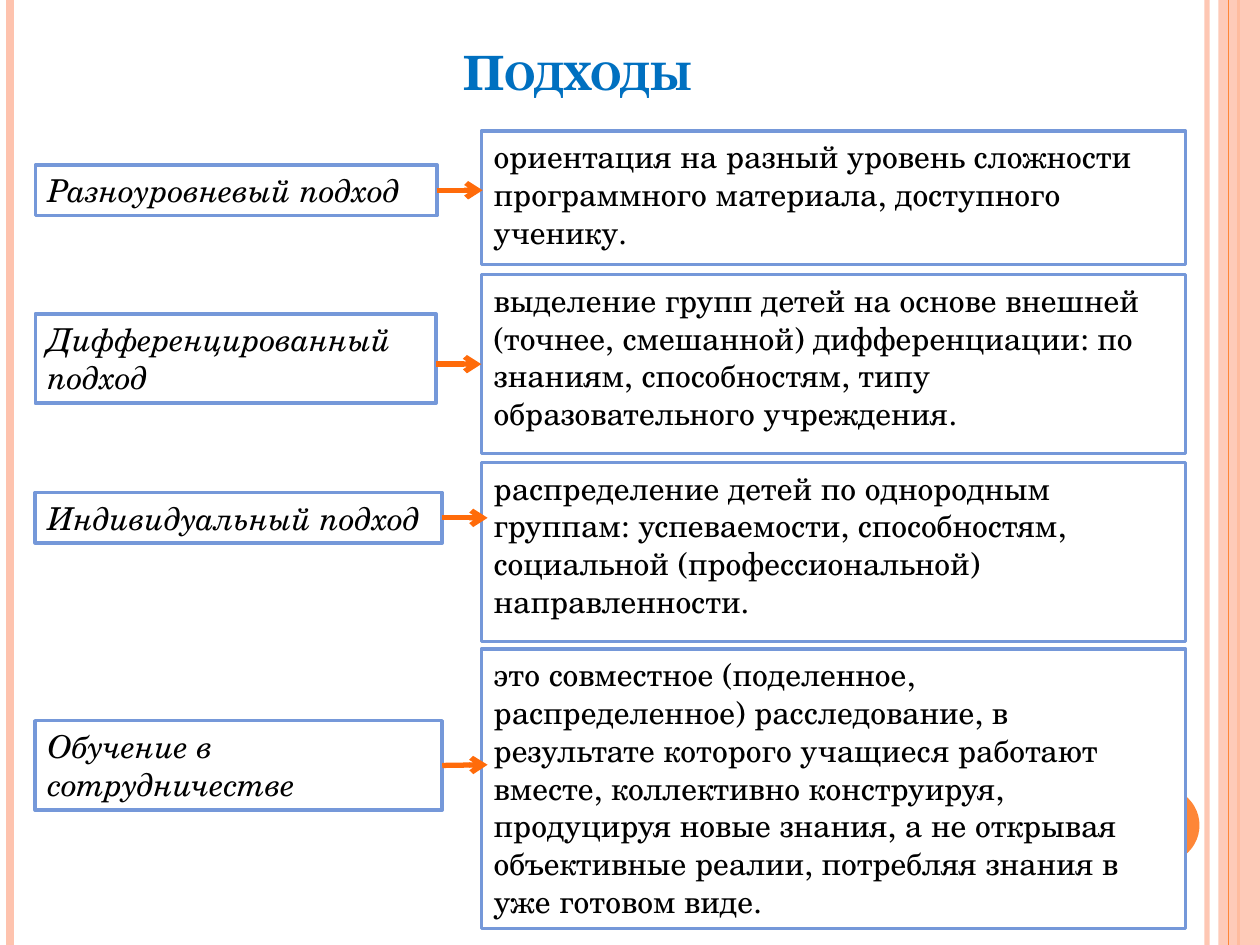
from pptx import Presentation
from pptx.dml.color import RGBColor
from pptx.enum.shapes import MSO_CONNECTOR, MSO_SHAPE
from pptx.enum.text import MSO_ANCHOR, MSO_AUTO_SIZE, PP_ALIGN
from pptx.oxml.ns import qn
from pptx.util import Inches, Pt
from lxml.etree import SubElement

FONT = "TeX Gyre Schola"
BLACK, WHITE = "000000", "FFFFFF"
PEACH, ORANGE, ARROW = "FEC3AE", "FE8637", "FF6B0A"
BORDER, TITLE = "7598D9", "0070C0"

LABEL_LEFT, TEXT_LEFT, TEXT_WIDTH = 0.28, 3.82, 5.59
ARROW_LENGTH = 0.36

# label lines, (top, width, height) of label, explanation, (top, height) of it, arrow y
APPROACHES = [
    (["Разноуровневый подход "], (1.31, 3.19, 0.4),
     "ориентация на разный уровень сложности программного материала, "
     "доступного ученику.", (1.04, 1.06), 1.51),
    (["Дифференцированный", "подход "], (2.49, 3.18, 0.71),
     "выделение групп детей на основе внешней (точнее, смешанной) "
     "дифференциации: по знаниям, способностям, типу образовательного "
     "учреждения.", (2.18, 1.42), 2.89),
    (["Индивидуальный подход"], (3.91, 3.23, 0.4),
     "распределение детей по однородным группам: успеваемости, способностям, "
     "социальной (профессиональной) направленности.", (3.67, 1.42), 4.11),
    (["Обучение в", "сотрудничестве"], (5.72, 3.23, 0.71),
     "это совместное (поделенное, распределенное) расследование, в результате "
     "которого учащиеся работают вместе, коллективно конструируя, продуцируя "
     "новые знания, а не открывая объективные реалии, потребляя знания в уже "
     "готовом виде.", (5.15, 2.22), 6.07),
]


def color(value):
    return RGBColor.from_string(value)


def set_opacity(shape, percent):
    for node in shape._element.spPr.iter(qn("a:srgbClr")):
        SubElement(node, qn("a:alpha")).set("val", str(percent * 1000))


class SlideBuilder:
    """Holds the text style and the slide being drawn."""

    def __init__(self, slide, font=FONT, size=18):
        self.slide, self.font, self.size = slide, font, size

    def run(self, paragraph, text, fill=BLACK, size=None, bold=False, italic=False):
        run = paragraph.add_run()
        run.text = text
        run.font.name = self.font
        run.font.size = Pt(size or self.size)
        run.font.bold, run.font.italic = bold, italic
        run.font.color.rgb = color(fill)
        return run

    def title(self, text, left, top, width, height):
        title = self.slide.shapes.title
        title.left, title.top = Inches(left), Inches(top)
        title.width, title.height = Inches(width), Inches(height)
        frame = title.text_frame
        frame.auto_size = MSO_AUTO_SIZE.NONE
        frame.vertical_anchor = MSO_ANCHOR.BOTTOM
        paragraph = frame.paragraphs[0]
        paragraph.alignment = PP_ALIGN.CENTER
        run = self.run(paragraph, text, TITLE, 27, bold=True)
        run._r.get_or_add_rPr().set("cap", "small")

    def shape(self, kind, left, top, width, height, fill, border=None):
        shape = self.slide.shapes.add_shape(
            kind, Inches(left), Inches(top), Inches(width), Inches(height))
        shape.shadow.inherit = False
        shape.fill.solid()
        shape.fill.fore_color.rgb = color(fill)
        if border:
            shape.line.color.rgb = color(border)
            shape.line.width = Pt(2)
        else:
            shape.line.fill.background()
        return shape

    def text_box(self, lines, left, top, width, height, italic=False):
        box = self.shape(MSO_SHAPE.RECTANGLE, left, top, width, height, WHITE, BORDER)
        frame = box.text_frame
        frame.word_wrap = True
        frame.vertical_anchor = MSO_ANCHOR.TOP
        for index, line in enumerate(lines):
            paragraph = frame.add_paragraph() if index else frame.paragraphs[0]
            paragraph.alignment = PP_ALIGN.LEFT
            self.run(paragraph, line, italic=italic)
        return box

    def label(self, lines, top, width, height):
        box = self.text_box(lines, LABEL_LEFT, top, width, height, italic=True)
        box.text_frame.word_wrap = len(lines) > 1
        box.text_frame.auto_size = MSO_AUTO_SIZE.SHAPE_TO_FIT_TEXT
        return box

    def line(self, x1, y1, x2, y2, stroke, width):
        line = self.slide.shapes.add_connector(
            MSO_CONNECTOR.STRAIGHT, Inches(x1), Inches(y1), Inches(x2), Inches(y2))
        line.line.color.rgb = color(stroke)
        line.line.width = Pt(width)
        SubElement(line._element.spPr, qn("a:effectLst"))
        return line

    def arrow(self, x, y):
        arrow = self.line(x, y, x + ARROW_LENGTH, y, ARROW, 3)
        SubElement(arrow.line._get_or_add_ln(), qn("a:tailEnd")).set("type", "arrow")
        return arrow

    def side_rails(self):
        def rail(x, stroke, width):
            return self.line(x, 0, x, 7.5, stroke, width)

        set_opacity(rail(9.58, PEACH, 3), 93)
        rail(0.08, PEACH, 4.5)
        rail(9.83, ORANGE, 1.5)
        band = self.shape(MSO_SHAPE.RECTANGLE, 9.67, 0, 0.33, 7.5, PEACH)
        set_opacity(band, 87)
        rail(9.75, ORANGE, 0.75)
        self.shape(MSO_SHAPE.OVAL, 8.92, 6.25, 0.6, 0.6, ORANGE)


def main():
    presentation = Presentation()
    presentation.slide_width, presentation.slide_height = Inches(10), Inches(7.5)
    slide = presentation.slides.add_slide(presentation.slide_layouts[5])
    builder = SlideBuilder(slide)
    builder.side_rails()
    builder.title("Подходы", 0.5, 0.3, 8.17, 0.54)

    for label_lines, label_place, explanation, (top, height), arrow_y in APPROACHES:
        text = builder.text_box([explanation], TEXT_LEFT, top, TEXT_WIDTH, height)
        label = builder.label(label_lines, *label_place)
        arrow = builder.arrow(LABEL_LEFT + label_place[1], arrow_y)
        if abs(top + height / 2 - arrow_y) < 0.01:
            arrow.end_connect(text, 1)
        else:
            arrow.begin_connect(label, 3)

    presentation.save("out.pptx")


if __name__ == "__main__":
    main()
